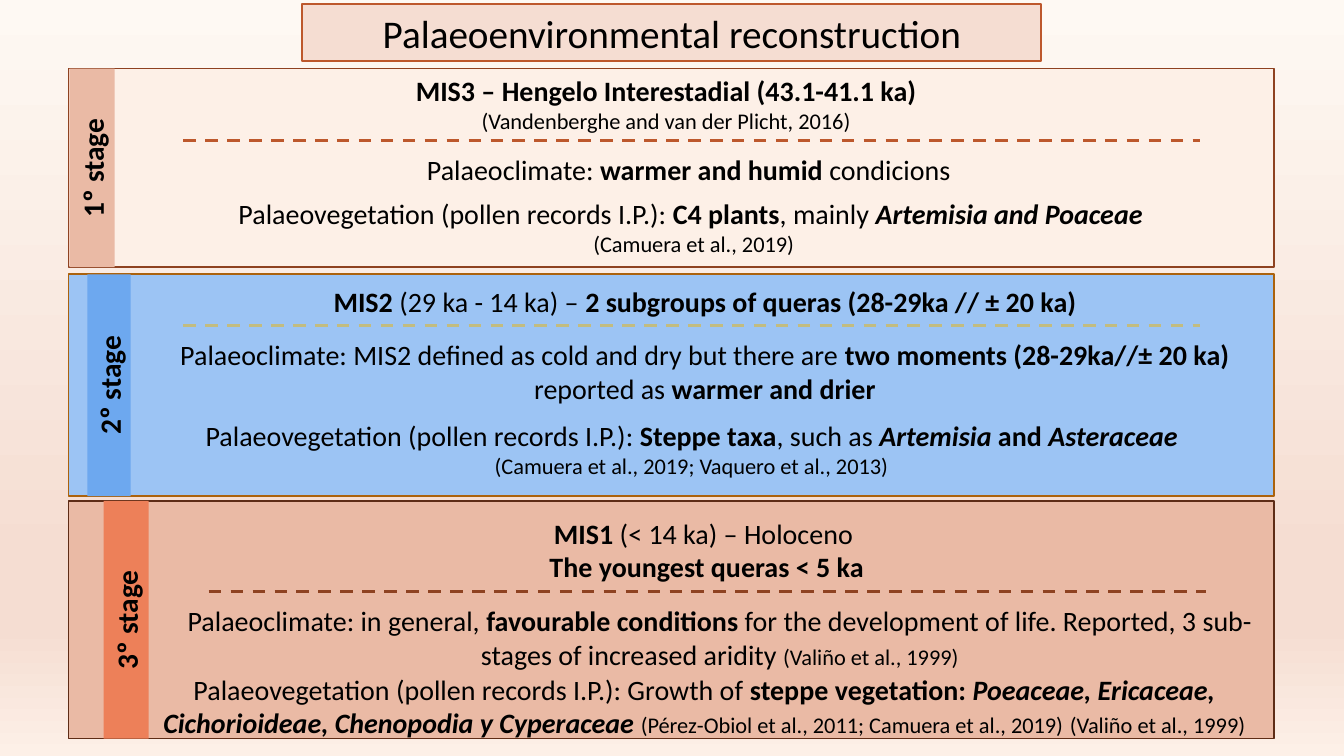
from copy import deepcopy

from lxml.etree import SubElement
from pptx import Presentation
from pptx.dml.color import RGBColor
from pptx.enum.dml import MSO_LINE
from pptx.enum.shapes import MSO_CONNECTOR, MSO_SHAPE
from pptx.enum.text import MSO_ANCHOR, PP_ALIGN
from pptx.oxml.ns import qn
from pptx.util import Cm, Pt

BLACK = RGBColor(0x00, 0x00, 0x00)
IVORY = RGBColor(0xFE, 0xF9, 0xF3)
BLUSH = RGBColor(0xF5, 0xDD, 0xD2)
CREAM = RGBColor(0xFD, 0xF0, 0xE7)
SALMON = RGBColor(0xEA, 0xBA, 0xA5)
CORAL = RGBColor(0xED, 0x80, 0x59)
SKY = RGBColor(0x9C, 0xC4, 0xF4)
BLUE = RGBColor(0x6D, 0xA8, 0xEF)
RUST = RGBColor(0xBD, 0x58, 0x2C)
BROWN = RGBColor(0x8E, 0x42, 0x21)
DARK_BROWN = RGBColor(0x5E, 0x2C, 0x16)
OCHRE = RGBColor(0xAB, 0x62, 0x0D)
KHAKI = RGBColor(0xC2, 0xBC, 0x80)

# Run formats
PLAIN = dict(size=Pt(20), bold=False, italic=False)
BOLD = dict(PLAIN, bold=True)
BOLD_ITALIC = dict(BOLD, italic=True)
CITE = dict(PLAIN, size=Pt(16))
TAB = dict(BOLD, size=Pt(21))
TITLE = dict(PLAIN, size=Pt(28))

# Each stage: panel, tab, divider, then text boxes as (position, paragraphs of runs)
STAGES = [
    dict(label="1º stage", top=1.73, height=5, fill=CREAM, line=BROWN, tab=SALMON, tab_width=1.14,
         divider=(4.62, 30.23, 3.54), dash=RUST, texts=[
             ((1.73, 1.73, 30.12, 1.8), [
                 [("MIS3 – Hengelo Interestadial (43.1-41.1 ka)", BOLD)],
                 [("(Vandenberghe and van der Plicht, 2016)", CITE)]]),
             ((2.9, 3.71, 28.91, 1.12), [
                 [("Palaeoclimate: ", PLAIN), ("warmer and humid ", BOLD), ("condicions", PLAIN)]]),
             ((4.62, 4.83, 25.73, 1.8), [
                 [("Palaeovegetation (pollen records I.P.): ", PLAIN), ("C4 plants", BOLD),
                  (", mainly ", PLAIN), ("Artemisia and Poaceae ", BOLD_ITALIC)],
                 [("(Camuera et al., 2019)", CITE)]]),
         ]),
    dict(label="2º stage", top=6.91, height=5.59, fill=SKY, line=OCHRE, tab=BLUE, tab_width=1.09,
         divider=(4.62, 30.23, 8.2), dash=KHAKI, texts=[
             ((6.02, 7.04, 23.5, 1.12), [
                 [("MIS2", BOLD), (" (29 ka - 14 ka) – ", PLAIN),
                  ("2 subgroups of queras (28-29ka // ± 20 ka)", BOLD)]]),
             ((4.29, 8.38, 26.95, 1.96), [
                 [("Palaeoclimate: MIS2 defined as cold and dry but there are ", PLAIN),
                  ("two moments (28-29ka//± 20 ka) ", BOLD), ("reported as ", PLAIN),
                  ("warmer and drier", BOLD)]]),
             ((4.55, 10.41, 25.76, 1.8), [
                 [("Palaeovegetation (pollen records I.P.): ", PLAIN), ("Steppe taxa", BOLD),
                  (", such as ", PLAIN), ("Artemisia ", BOLD_ITALIC), ("and ", BOLD),
                  ("Asteraceae", BOLD_ITALIC)],
                 [("(Camuera et al., 2019; Vaquero et al., 2013)", CITE)]]),
         ]),
    dict(label="3º stage", top=12.62, height=5.99, fill=SALMON, line=DARK_BROWN, tab=CORAL, tab_width=1.14,
         divider=(5.26, 30.38, 14.91), dash=BROWN, texts=[
             ((5.49, 12.88, 24.64, 1.96), [
                 [("MIS1", BOLD), (" (< 14 ka) – Holoceno ", PLAIN)],
                 [("The youngest queras < 5 ka", BOLD)]]),
             ((4.17, 15.09, 27.94, 1.96), [
                 [("Palaeoclimate: in general, ", PLAIN), ("favourable conditions ", BOLD),
                  ("for the development of life. Reported, 3 sub-stages of increased aridity ", PLAIN),
                  ("(Valiño et al., 1999)", CITE)]]),
             ((3.78, 16.81, 27.94, 1.96), [
                 [("Palaeovegetation (pollen records I.P.): Growth of ", PLAIN),
                  ("steppe vegetation: ", BOLD),
                  ("Poeaceae, Ericaceae, Cichorioideae, Chenopodia y Cyperaceae ", BOLD_ITALIC),
                  ("(Pérez-Obiol et al., 2011; Camuera et al., 2019)", CITE), (" ", BOLD),
                  ("(Valiño et al., 1999)", CITE)]]),
         ]),
]


def add_rect(left, top, width, height, fill, line=None, weight=1.25):
    sp = s.shapes.add_shape(MSO_SHAPE.RECTANGLE, Cm(left), Cm(top), Cm(width), Cm(height))
    sp.shadow.inherit = False
    sp.fill.solid()
    sp.fill.fore_color.rgb = fill
    if line is None:
        sp.line.fill.background()
    else:
        sp.line.color.rgb = line
        sp.line.width = Pt(weight)
    return sp


def write(sp, paragraphs, anchor=MSO_ANCHOR.MIDDLE):
    tf = sp.text_frame
    tf.word_wrap = True
    tf.vertical_anchor = anchor
    for i, runs in enumerate(paragraphs):
        p = tf.add_paragraph() if i else tf.paragraphs[0]
        p.alignment = PP_ALIGN.CENTER
        for text, style in runs:
            r = p.add_run()
            r.text = text
            r.font.name = "Calibri"
            r.font.color.rgb = BLACK
            for name, value in style.items():
                setattr(r.font, name, value)


prs = Presentation()
prs.slide_width, prs.slide_height = Cm(33.87), Cm(19.05)
s = prs.slides.add_slide(prs.slide_layouts[6])

# Background gradient, top to bottom
fill = s.background.fill
fill.gradient()
fill.gradient_angle = 270
stop_list = s.element.xpath(".//a:gsLst")[0]
for stop in list(stop_list):
    stop_list.append(deepcopy(stop))
gradient = [(0, IVORY), (0.74, BLUSH), (0.83, BLUSH), (1, CREAM)]
for stop, (position, color) in zip(fill.gradient_stops, gradient):
    stop.position = position
    stop.color.rgb = color

# Stages
for i, stage in enumerate(STAGES):
    top, height, tab_width = stage["top"], stage["height"], stage["tab_width"]
    add_rect(1.73, top, 30.38, height, stage["fill"], stage["line"])

    # Tab turned to read upwards, stepped to the right at each stage
    center_x, center_y = 2.32 + 0.43 * i, top + height / 2
    sp = add_rect(center_x - height / 2, center_y - tab_width / 2, height, tab_width, stage["tab"])
    sp.rotation = 270
    write(sp, [[(stage["label"], TAB)]])

    for box, paragraphs in stage["texts"]:
        write(s.shapes.add_textbox(*map(Cm, box)), paragraphs, MSO_ANCHOR.TOP)

    # Dashed divider
    x1, x2, y = map(Cm, stage["divider"])
    line = s.shapes.add_connector(MSO_CONNECTOR.STRAIGHT, x1, y, x2, y)
    line.line.color.rgb = stage["dash"]
    line.line.width = Pt(2.25)
    line.line.dash_style = MSO_LINE.DASH
    SubElement(line.element.spPr, qn("a:effectLst"))

# Title
sp = add_rect(7.62, 0.1, 18.62, 1.45, BLUSH, RUST, 1.5)
write(sp, [[("Palaeoenvironmental reconstruction", TITLE)]])

prs.save("out.pptx")
